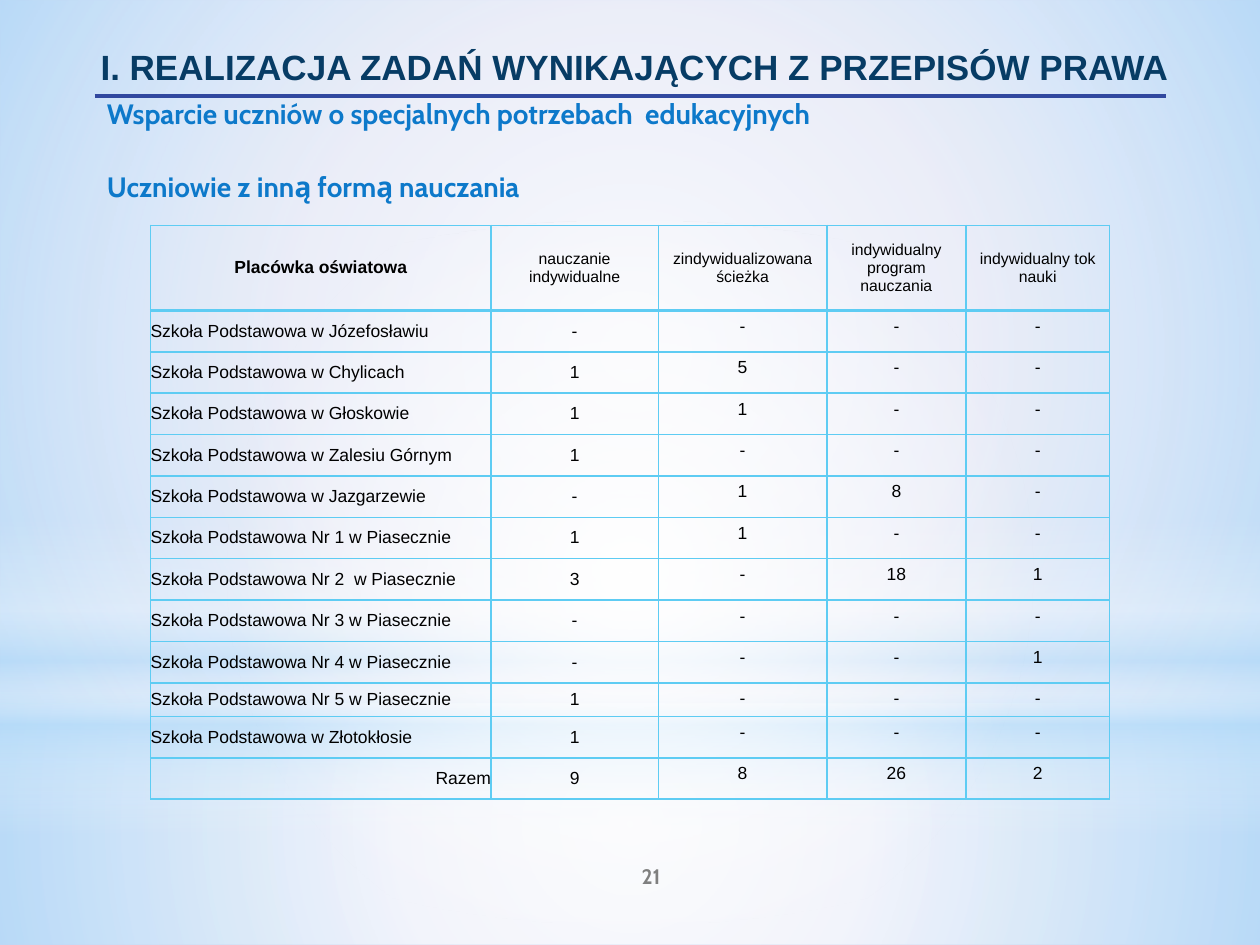
from lxml import etree
from pptx import Presentation, util as u
from pptx.dml.color import RGBColor
from pptx.enum import shapes as s, text as t
from pptx.oxml import parse_xml
from pptx.oxml.ns import qn

Pt, rgb = u.Pt, RGBColor.from_string
NS = 'xmlns:a="http://schemas.openxmlformats.org/drawingml/2006/main"'
LEFT, MID, RIGHT = t.PP_ALIGN.LEFT, t.PP_ALIGN.CENTER, t.PP_ALIGN.RIGHT
TOP, CORE = t.MSO_ANCHOR.TOP, t.MSO_ANCHOR.MIDDLE


def write(frame, words, align, size, bold, name="Arial", hue="000000"):
    """Fill a text frame, one paragraph per line."""
    frame.text = words
    form = {"size": Pt(size), "bold": bold, "name": name}
    for para in frame.paragraphs:
        para.alignment = align
        for run in para.runs:
            for key, val in form.items():
                setattr(run.font, key, val)
            run.font.color.rgb = rgb(hue)


prs = Presentation()
prs.slide_width, prs.slide_height = Pt(720), Pt(540)
page = prs.slides.add_slide(prs.slide_layouts[6])
fill = page.background.fill
fill.solid()
fill.fore_color.rgb = rgb("CAD1EE")

# Soft light: kind, top, height, stops (place, hue, opacity), round or not
WHITE, SKY = "FFFFFF", "B4DCFA"
BOX, OVAL = s.MSO_SHAPE.RECTANGLE, s.MSO_SHAPE.OVAL
glows = [
    (BOX, 402, 138, [(0, WHITE, 91), (37, WHITE, 76), (100, SKY, 79)], True),
    (BOX, 0, 402, [(0, WHITE, 89), (48, WHITE, 62), (100, SKY, 79)], True),
    (BOX, 296.6, 180, [(0, WHITE, 0), (29, WHITE, 30), (45, SKY, 40),
                       (55, WHITE, 26), (65, SKY, 60), (100, WHITE, 0)], False),
    (OVAL, 126, 402, [(0, WHITE, 100), (56, WHITE, 0)], True),
]
for kind, top, high, stops, is_round in glows:
    glow = page.shapes.add_shape(kind, 0, Pt(top), Pt(720), Pt(high))
    glow.shadow.inherit = False
    glow.line.fill.background()
    marks = "".join(
        f'<a:gs pos="{pos * 1000}"><a:srgbClr val="{hue}">'
        f'<a:alpha val="{alpha * 1000}"/></a:srgbClr></a:gs>'
        for pos, hue, alpha in stops)
    way = ('<a:path path="circle"><a:fillToRect l="50000" t="50000" '
           'r="50000" b="50000"/></a:path>' if is_round
           else '<a:lin ang="5400000" scaled="0"/>')
    grad = parse_xml(f'<a:gradFill {NS} rotWithShape="1">'
                     f'<a:gsLst>{marks}</a:gsLst>{way}</a:gradFill>')
    glow._element.spPr.find(qn("a:prstGeom")).addnext(grad)

# Page number, title and two headings
BLUE = "0D79CA"
notes = [
    ("21", (300, 486, 144, 28.8), MID, 12, "Cabin", "7F7F7F", CORE, 0, 3.6),
    ("I. REALIZACJA ZADAŃ WYNIKAJĄCYCH Z PRZEPISÓW PRAWA",
     (36, 20.2, 648, 62.6), LEFT, 20, "Arial", "073C65", TOP, 14.4, 6),
    ("Uczniowie z inną formą nauczania",
     (54, 93.6, 620.6, 26.6), t.PP_ALIGN.JUSTIFY, 16, "Cabin", BLUE, TOP, 0, 3.6),
    ("Wsparcie uczniów o specjalnych potrzebach  edukacyjnych",
     (54, 51.8, 616.3, 26.6), LEFT, 16, "Cabin", BLUE, TOP, 0, 3.6),
]
for words, place, align, size, name, hue, anchor, indent, pad in notes:
    frame = page.shapes.add_textbox(*map(Pt, place)).text_frame
    form = {"word_wrap": True, "vertical_anchor": anchor, "margin_top": Pt(pad)}
    for key, val in form.items():
        setattr(frame, key, val)
    write(frame, words, align, size, True, name, hue)
    if indent:
        frame.paragraphs[0]._p.get_or_add_pPr().set("marL", str(Pt(indent)))

# Rule under the title
rule = page.shapes.add_connector(s.MSO_CONNECTOR.STRAIGHT,
                                 Pt(54), Pt(54.7), Pt(666), Pt(54.7))
rule.line.color.rgb = rgb("31489F")
rule.line.width = Pt(2.25)
etree.SubElement(rule._element.spPr, qn("a:effectLst"))

# Table content
SCHOOL = "Szkoła Podstawowa "
heads = ["Placówka oświatowa", "nauczanie\nindywidualne",
         "zindywidualizowana ścieżka", "indywidualny program nauczania",
         "indywidualny tok nauki"]
counts = [
    ("w Józefosławiu", "-", "-", "-", "-"),
    ("w Chylicach", "1", "5", "-", "-"),
    ("w Głoskowie", "1", "1", "-", "-"),
    ("w Zalesiu Górnym", "1", "-", "-", "-"),
    ("w Jazgarzewie", "-", "1", "8", "-"),
    ("Nr 1 w Piasecznie", "1", "1", "-", "-"),
    ("Nr 2  w Piasecznie", "3", "-", "18", "1"),
    ("Nr 3 w Piasecznie", "-", "-", "-", "-"),
    ("Nr 4 w Piasecznie", "-", "-", "-", "1"),
    ("Nr 5 w Piasecznie", "1", "-", "-", "-"),
    ("w Złotokłosie", "1", "-", "-", "-"),
]
rows = [heads, *([SCHOOL + where, *nums] for where, *nums in counts),
        ["Razem", "9", "8", "26", "2"]]
wide = [194.5, 95.7, 96.3, 79.5, 82]
tall = [48.6] + [23.65] * 9 + [18.9] + [23.65] * 2

# Table grid
grid = page.shapes.add_table(len(rows), len(wide), Pt(86), Pt(128.8),
                             Pt(sum(wide)), Pt(sum(tall))).table
grid.first_row = grid.horz_banding = False
for col, size in zip(grid.columns, wide):
    col.width = Pt(size)
for row, size in zip(grid.rows, tall):
    row.height = Pt(size)

# Table cells
for r, row in enumerate(rows):
    for c, words in enumerate(row):
        cell = grid.cell(r, c)
        head, tight = r == 0, c == 0 or (c == 1 and r > 0)
        if c or head:
            align = MID
        else:
            align = RIGHT if words == "Razem" else LEFT
        write(cell.text_frame, words, align, 9 if head and c else 10,
              head and c == 0)
        cell.vertical_anchor = CORE if head or c < 2 else TOP
        if tight:
            for side in ("left", "right", "top", "bottom"):
                setattr(cell, "margin_" + side, 0)
        cell.fill.background()
        props = cell._tc.get_or_add_tcPr()
        for i, side in enumerate("LRTB"):
            thick = 2 if (r, side) in ((0, "B"), (1, "T")) else 1
            props.insert(i, parse_xml(
                f'<a:ln{side} {NS} w="{Pt(thick)}"><a:solidFill>'
                f'<a:srgbClr val="5ECCF3"/></a:solidFill></a:ln{side}>'))

prs.save("out.pptx")
